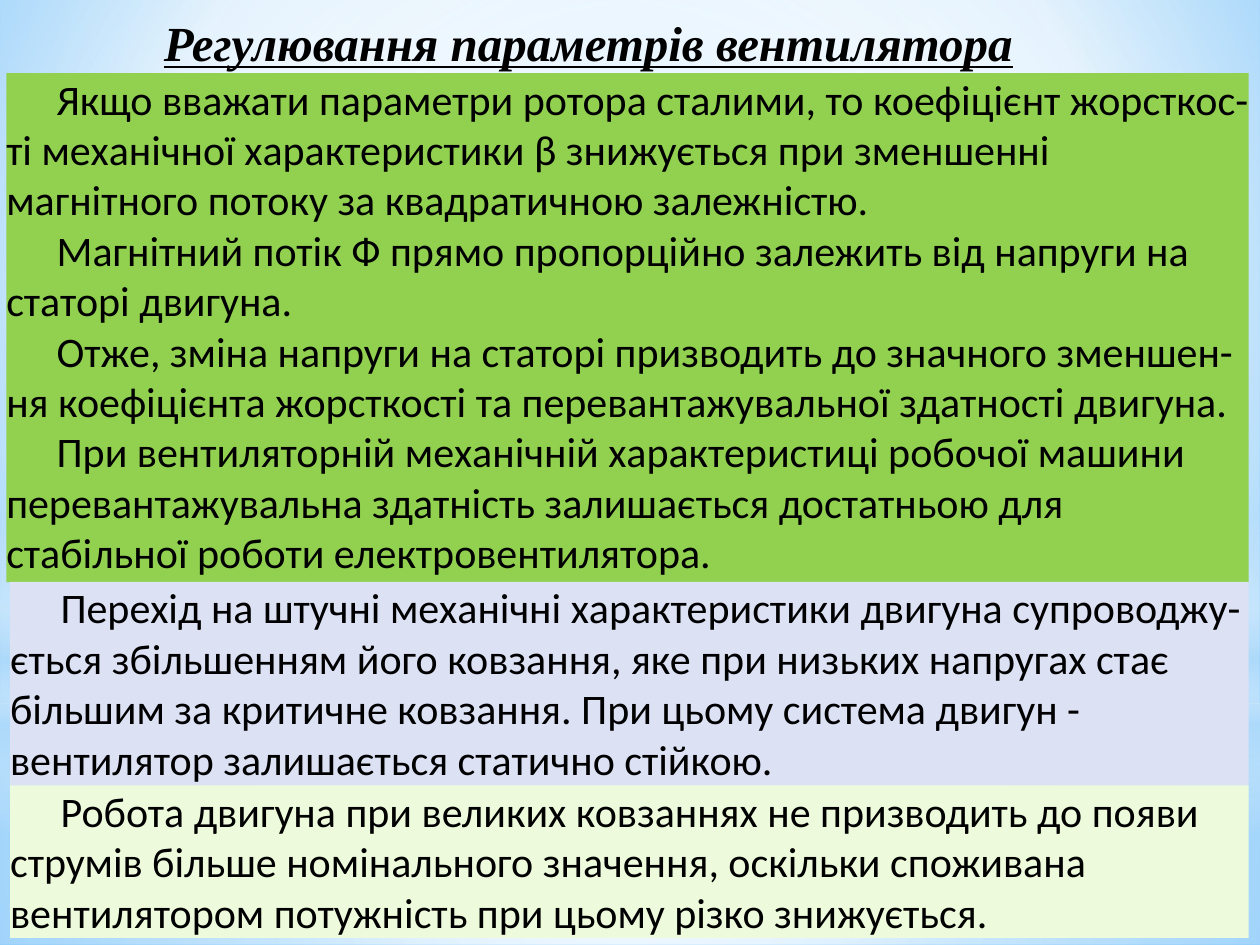
from lxml.etree import SubElement
from pptx import Presentation
from pptx.dml.color import RGBColor
from pptx.enum.shapes import MSO_SHAPE as Preset
from pptx.enum.text import MSO_ANCHOR as Anchor, MSO_AUTO_SIZE as AutoSize, PP_ALIGN as Align
from pptx.oxml.ns import qn
from pptx.util import Pt

TITLE = "Регулювання параметрів вентилятора"
PANELS = [
    ((3.6, 41.8, 709.9, 290.9), "92D050", [
        "Якщо вважати параметри ротора сталими, то коефіцієнт жорсткос-ті механічної "
        "характеристики β знижується при зменшенні магнітного потоку за квадратичною залежністю.",
        "Магнітний потік Ф прямо пропорційно залежить від напруги на статорі двигуна.",
        "Отже, зміна напруги на статорі призводить до значного зменшен-ня коефіцієнта "
        "жорсткості та перевантажувальної здатності двигуна.",
        "При вентиляторній механічній характеристиці робочої машини перевантажувальна "
        "здатність залишається достатньою для стабільної роботи електровентилятора.",
    ]),
    ((5.8, 332.6, 707.7, 116.4), "DCE1F4", [
        "Перехід на штучні механічні характеристики двигуна супроводжу-ється збільшенням "
        "його ковзання, яке при низьких напругах стає більшим за критичне ковзання. "
        "При цьому система двигун - вентилятор залишається статично стійкою.",
    ]),
    ((5.8, 448.8, 707.7, 87.1), "EDFBDC", [
        "Робота двигуна при великих ковзаннях не призводить до появи струмів більше "
        "номінального значення, оскільки споживана вентилятором потужність при цьому "
        "різко знижується.",
    ]),
]
CENTER = (50, 50, 50, 50)
GLOWS = [
    (Preset.RECTANGLE, (0, 401.8, 720, 138.2), CENTER,
     [(0, "FFFFFF", 91), (37, "FFFFFF", 76), (100, "B4DCFA", 79)]),
    (Preset.RECTANGLE, (0, 0, 720, 401.8), CENTER,
     [(0, "FFFFFF", 89), (48, "FFFFFF", 62), (100, "B4DCFA", 79)]),
    (Preset.RECTANGLE, (0, 296.6, 720, 180), None,
     [(0, "FFFFFF", 0), (29, "FFFFFF", 30), (45, "B4DCFA", 40),
      (55, "FFFFFF", 26), (65, "B4DCFA", 60), (100, "FFFFFF", 0)]),
    (Preset.OVAL, (0, 126, 720, 401.8), CENTER,
     [(0, "FFFFFF", 100), (56, "FFFFFF", 0)]),
]


def color(value):
    return RGBColor.from_string(value)


def set_gradient(properties, stops, focus):
    solid = properties.find(qn("a:solidFill"))
    gradient = solid.makeelement(qn("a:gradFill"), {"rotWithShape": "1"})
    properties.replace(solid, gradient)
    stop_list = SubElement(gradient, qn("a:gsLst"))
    for position, value, opacity in stops:
        stop = SubElement(stop_list, qn("a:gs"), pos=str(position * 1000))
        tone = SubElement(stop, qn("a:srgbClr"), val=str(color(value)))
        if opacity < 100:
            SubElement(tone, qn("a:alpha"), val=str(opacity * 1000))
    if focus:
        path = SubElement(gradient, qn("a:path"), path="circle")
        edges = {side: str(edge * 1000) for side, edge in zip("ltrb", focus)}
        SubElement(path, qn("a:fillToRect"), edges)
    else:
        SubElement(gradient, qn("a:lin"), ang="5400000", scaled="0")


def add_plain_shape(slide, preset, box, fill):
    shape = slide.shapes.add_shape(preset, *map(Pt, box))
    shape.shadow.inherit = False
    shape.fill.solid()
    shape.fill.fore_color.rgb = color(fill)
    shape.line.fill.background()
    return shape


def add_background(slide):
    slide.background.fill.solid()
    properties = next(slide.element.iter(qn("p:bgPr")))
    stops = [(0, "9ED5FF", 100), (60, "FFFFFF", 100), (100, "5BB9FF", 100)]
    set_gradient(properties, stops, (20, 10, 20, 60))
    for preset, box, focus, glow_stops in GLOWS:
        shape = add_plain_shape(slide, preset, box, "FFFFFF")
        set_gradient(shape.element.spPr, glow_stops, focus)


def prepare_frame(shape, wrap):
    frame = shape.text_frame
    frame.margin_left = frame.margin_top = frame.margin_right = frame.margin_bottom = 0
    frame.vertical_anchor = Anchor.TOP
    frame.word_wrap = wrap
    frame.auto_size = AutoSize.SHAPE_TO_FIT_TEXT
    return frame


def add_run(paragraph, text, size, font_name):
    paragraph.alignment = Align.LEFT
    run = paragraph.add_run()
    run.text = text
    run.font.size = Pt(size)
    run.font.name = font_name
    run.font.color.rgb = color("000000")
    return run


def add_title(slide, box):
    frame = prepare_frame(slide.shapes.add_textbox(*map(Pt, box)), False)
    font = add_run(frame.paragraphs[0], TITLE, 28, "Times New Roman").font
    font.bold = font.italic = font.underline = True


def add_panel(slide, box, fill, texts):
    frame = prepare_frame(add_plain_shape(slide, Preset.RECTANGLE, box, fill), True)
    for index, text in enumerate(texts):
        paragraph = frame.add_paragraph() if index else frame.paragraphs[0]
        add_run(paragraph, text, 24, "Calibri")
        properties = paragraph._p.get_or_add_pPr()
        properties.set("marL", "0")
        properties.set("indent", str(Pt(28.8)))


def main():
    presentation = Presentation()
    presentation.slide_width, presentation.slide_height = Pt(720), Pt(540)
    slide = presentation.slides.add_slide(presentation.slide_layouts[6])
    add_background(slide)
    add_title(slide, (93.6, 7.2, 492.5, 33.8))
    for box, fill, texts in PANELS:
        add_panel(slide, box, fill, texts)
    presentation.save("out.pptx")


if __name__ == "__main__":
    main()
